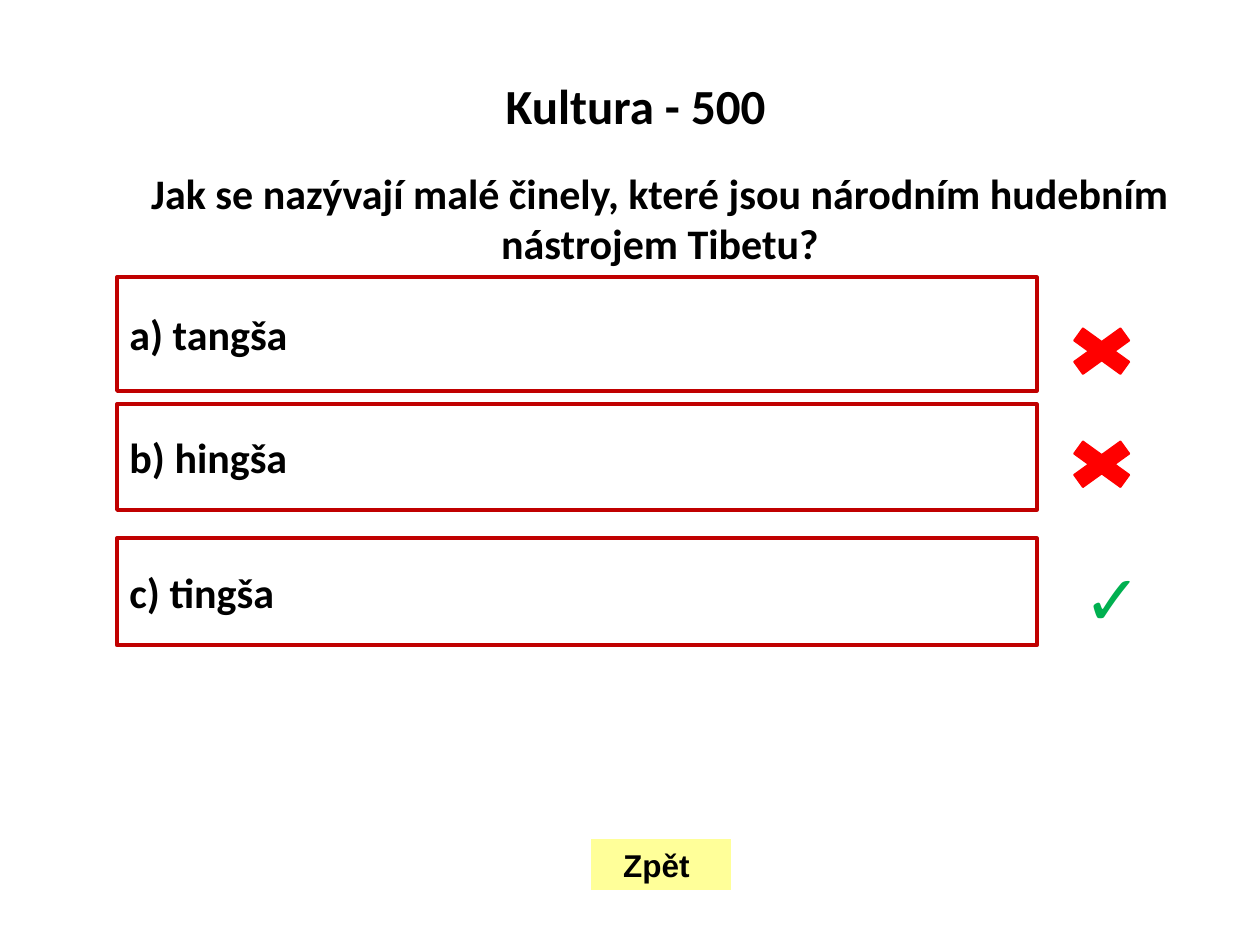
from pptx import Presentation
from pptx.dml.color import RGBColor
from pptx.enum.shapes import MSO_SHAPE
from pptx.enum.text import MSO_ANCHOR, PP_ALIGN
from pptx.util import Cm, Pt

TITLE = "  Kultura - 500 "
QUESTION = "Jak se nazývají malé činely, které jsou národním hudebním nástrojem Tibetu?"
ANSWERS = [
    ("a) tangša", 5.59, 2.29),
    ("b) hingša", 8.15, 2.13),
    ("c) tingša", 10.85, 2.16),
]
WRONG_MARK_TOPS = [6.43, 8.71]
BLACK, RED, DARK_RED, GREEN, YELLOW = "000000", "FF0000", "C00000", "00B050", "FFFF99"


def set_color(color_format, value):
    color_format.rgb = RGBColor.from_string(value)


def write(text_frame, text, size, font="Calibri", color=BLACK, align=PP_ALIGN.LEFT):
    paragraph = text_frame.paragraphs[0]
    paragraph.alignment = align
    run = paragraph.add_run()
    run.text = text
    run.font.name = font
    run.font.size = Pt(size)
    run.font.bold = True
    set_color(run.font.color, color)
    return paragraph


def add_box(slide, kind, left, top, width, height, fill=None, line=None, line_width=1):
    shape = slide.shapes.add_shape(kind, Cm(left), Cm(top), Cm(width), Cm(height))
    shape.shadow.inherit = False
    if fill:
        shape.fill.solid()
        set_color(shape.fill.fore_color, fill)
    else:
        shape.fill.background()
    if line:
        set_color(shape.line.color, line)
        shape.line.width = Pt(line_width)
    else:
        shape.line.fill.background()
    return shape


def add_button(slide, text, size, font, align, *place, **style):
    button = add_box(slide, MSO_SHAPE.ACTION_BUTTON_CUSTOM, *place, **style)
    button.text_frame.word_wrap = False
    button.text_frame.vertical_anchor = MSO_ANCHOR.MIDDLE
    write(button.text_frame, text, size, font, align=align)


def add_text(slide, text, size, left, top, width, height, **style):
    text_box = slide.shapes.add_textbox(Cm(left), Cm(top), Cm(width), Cm(height))
    text_box.text_frame.word_wrap = True
    write(text_box.text_frame, text, size, **style)


def main():
    presentation = Presentation()
    presentation.slide_width, presentation.slide_height = Cm(25.4), Cm(19.05)
    slide = presentation.slides.add_slide(presentation.slide_layouts[5])

    title = slide.shapes.title
    title.left, title.top, title.width, title.height = Cm(0), Cm(1.52), Cm(25.4), Cm(2.01)
    title.text_frame.vertical_anchor = MSO_ANCHOR.TOP
    write(title.text_frame, TITLE, 28, align=PP_ALIGN.CENTER).line_spacing = 0.9

    for text, top, height in ANSWERS:
        add_button(slide, text, 24, "Calibri", PP_ALIGN.LEFT,
                   2.36, top, 18.54, height, line=DARK_RED, line_width=2.25)
    add_button(slide, "Zpět ", 18, "Arial", PP_ALIGN.CENTER,
               11.91, 16.92, 2.82, 1.02, fill=YELLOW)

    for top in WRONG_MARK_TOPS:
        add_box(slide, MSO_SHAPE.MATH_MULTIPLY, 21.31, top, 1.8, 1.3, fill=RED, line=RED)
    add_text(slide, "✓", 40, 21.59, 11.07, 1.78, 1.96, font="Arial", color=GREEN)
    add_text(slide, QUESTION, 24, 2.51, 3.25, 21.59, 2.31, align=PP_ALIGN.CENTER)

    presentation.save("out.pptx")


if __name__ == "__main__":
    main()
